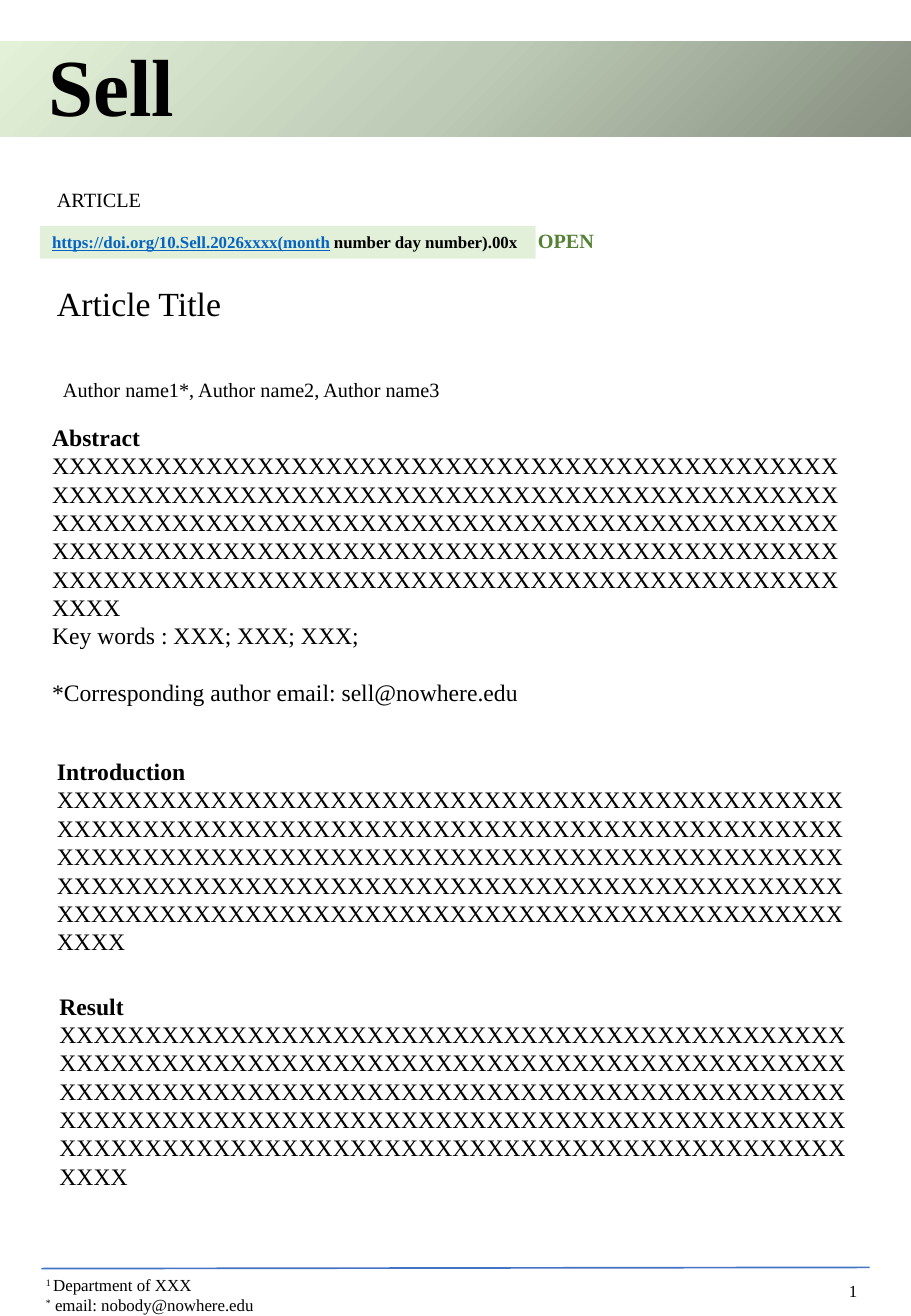
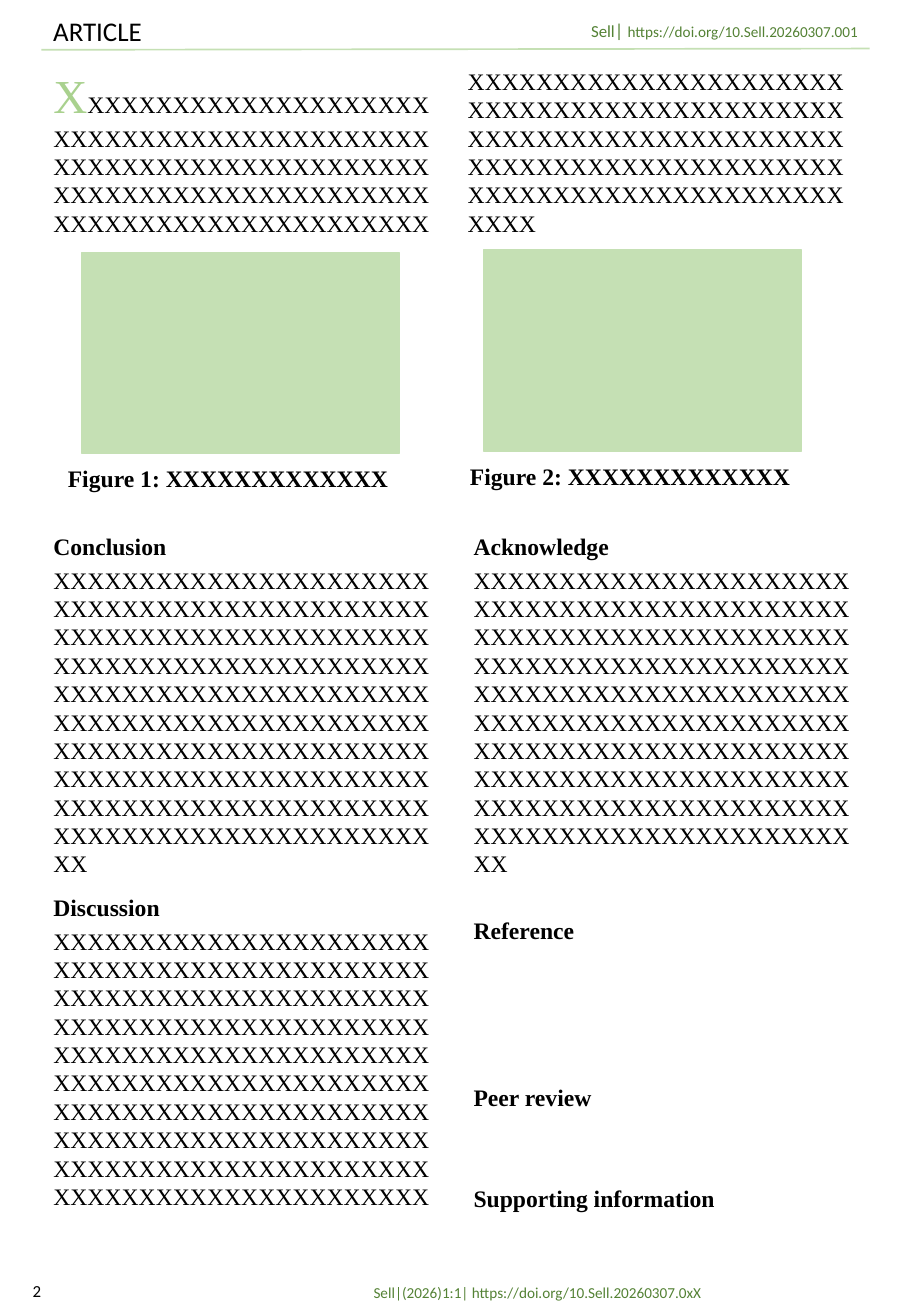
"""Build a two-page journal article template."""
from dataclasses import dataclass

from pptx import Presentation
from pptx.dml.color import RGBColor
from pptx.enum.shapes import MSO_CONNECTOR, MSO_SHAPE
from pptx.enum.text import MSO_AUTO_SIZE, PP_ALIGN
from pptx.oxml import parse_xml
from pptx.oxml.ns import nsdecls, qn
from pptx.util import Inches, Pt

RECT = MSO_SHAPE.RECTANGLE
STRAIGHT = MSO_CONNECTOR.STRAIGHT
FIT = MSO_AUTO_SIZE.SHAPE_TO_FIT_TEXT
LEFT, RIGHT, EVEN = PP_ALIGN.LEFT, PP_ALIGN.RIGHT, PP_ALIGN.JUSTIFY


@dataclass(frozen=True)
class Theme:
    """Colours, fonts and type sizes."""
    serif: str = "Times New Roman"
    sans: str = "Calibri"
    black: str = "000000"
    green: str = "548235"
    leaf: str = "A9D18E"
    pale: str = "C5E0B4"
    mint: str = "E2F0D9"
    link: str = "0563C1"
    blue: str = "4472C4"
    fade: tuple = ((0, "868F80"), (50, "BECBB6"), (100, "E2F1D8"))
    logo: int = 48
    drop: int = 28
    title: int = 20
    head: int = 16
    body: int = 14
    label: int = 12
    bar: int = 11
    small: int = 10
    tiny: int = 9


T = Theme()
WIDE, TALL = 7.5, 10.83
EDGE, END = 0.34, 7.16
ROW, AFTER = 16.8, 3
STEP = ROW + AFTER
BOLD = {"bold": True}
SUP = {"sup": True}

LONG = "X" * 234
MID = "X" * 222
SHORT = "X" * 220

FRONT = [
    ((0.3, 0.24, 1.25, 0.91), ["Sell"], dict(size=T.logo, bold=True, wrap=False)),
    ((0.37, 1.49, 0.91, 0.3), ["ARTICLE"], dict(size=T.label, wrap=False)),
    ((0.33, 1.86, 4.08, 0.27),
     [[("https://doi.org/10.Sell.2026xxxx(month", {"color": T.link, "under": True}),
       (" number day number).00x", {})]],
     dict(size=T.small, bold=True, wrap=False, fill=T.mint)),
    ((4.33, 1.83, 0.68, 0.3), ["OPEN"],
     dict(size=T.label, color=T.green, bold=True, wrap=False)),
    ((0.37, 2.28, 6.99, 0.44), ["Article Title"], dict(size=T.title)),
    ((0.42, 3.06, 6.99, 0.44), ["Author name1*, Author name2, Author name3"],
     dict(size=T.label)),
    ((0.33, 3.43, 6.75, 2.79),
     [[("Abstract", BOLD)], LONG, "Key words : XXX; XXX; XXX;",
      "*Corresponding author email: sell@nowhere.edu"],
     dict(align=EVEN, gaps={3: ROW})),
    ((0.28, 10.44, 6.82, 0.44),
     [[("1 ", SUP), ("Department of XXX", {})],
      [("*", SUP), (" email: nobody@nowhere.edu", {})]], dict(size=T.small)),
    ((6.89, 10.49, 0.27, 0.27), ["1"], dict(size=T.small, wrap=False)),
    ((0.37, 6.18, 6.72, 1.75), [[("Introduction", BOLD)], LONG], {}),
    ((0.39, 8.11, 6.72, 1.75), [[("Result", BOLD)], LONG], {}),
]

PROSE = dict(align=EVEN, after=AFTER)
INNER = [
    ((EDGE, 0.07, 0.96, 0.37), ["ARTICLE"],
     dict(size=T.head, font=T.sans, wrap=False)),
    ((4.75, 0.11, 2.41, 0.29),
     [[("Sell", {"size": T.small}), ("| ", {"size": T.bar}),
       ("https://doi.org/10.Sell.20260307.001", {})]],
     dict(size=T.tiny, font=T.sans, color=T.green, align=RIGHT, wrap=False)),
    ((EDGE, 0.5, 6.82, 1.53),
     [[("X", {"size": T.drop, "color": T.leaf}), (MID, {})]],
     dict(PROSE, cols=2)),
    ((0.17, 10.49, 0.27, 0.27), ["2"],
     dict(size=T.small, font=T.sans, wrap=False)),
    ((2.95, 10.51, 2.92, 0.25),
     ["Sell|(2026)1:1| https://doi.org/10.Sell.20260307.0xX"],
     dict(size=T.tiny, font=T.sans, color=T.green, align=RIGHT, wrap=False)),
    ((EDGE, 4.33, 3.41, 2.97), [[("Conclusion", BOLD)], MID], PROSE),
    ((EDGE, 7.3, 3.41, 2.73), [[("Discussion", BOLD)], SHORT], PROSE),
    ((3.8, 4.33, 3.41, 6.3),
     [[("Acknowledge", BOLD)], MID, [("Reference", BOLD)],
      [("Peer review", BOLD)], [("Supporting information", BOLD)]],
     dict(PROSE, gaps={2: STEP, 3: 4 * STEP, 4: 2 * STEP})),
]

FIGURES = [
    (0.46, 2.08, "Figure 1: XXXXXXXXXXXXX"),
    (3.77, 2.06, "Figure 2: XXXXXXXXXXXXX"),
]


def rgb(code):
    """Turn a hex code into a colour."""
    return RGBColor.from_string(code)


def text(home, box, paras, size=T.body, font=T.serif, color=T.black,
         bold=False, align=LEFT, after=0, wrap=True, cols=1, fill=None,
         gaps=None):
    """Add a text box whose paragraphs are strings or lists of runs."""
    shape = home.add_textbox(*map(Inches, box))
    if fill:
        shape.fill.solid()
        shape.fill.fore_color.rgb = rgb(fill)
    frame = shape.text_frame
    frame.word_wrap = wrap
    frame.auto_size = FIT
    if cols > 1:
        body = frame._txBody.find(qn("a:bodyPr"))
        body.set("numCol", str(cols))
        body.set("spcCol", str(Inches(0.2)))
    for i, runs in enumerate(paras):
        para = frame.paragraphs[0] if i == 0 else frame.add_paragraph()
        para.alignment = align
        para.space_after = Pt(after)
        para.space_before = Pt((gaps or {}).get(i, 0))
        for words, look in [(runs, {})] if isinstance(runs, str) else runs:
            run = para.add_run()
            run.text = words
            face = run.font
            face.name = font
            face.size = Pt(look.get("size", size))
            face.bold = look.get("bold", bold)
            face.underline = look.get("under", False)
            face.color.rgb = rgb(look.get("color", color))
            if look.get("sup"):
                run._r.get_or_add_rPr().set("baseline", "30000")


def rule(home, y, color):
    """Draw a thin rule across the page that rises slightly."""
    line = home.add_connector(
        STRAIGHT, *map(Inches, (EDGE, y, END, y - 0.01)))
    line.line.color.rgb = rgb(color)
    line.line.width = Pt(1)
    line._element.spPr.append(parse_xml(f"<a:effectLst {nsdecls('a')}/>"))


def band(home):
    """Draw the shaded band behind the journal name."""
    shape = home.add_shape(RECT, *map(Inches, (0, 0.34, WIDE, 0.78)))
    shape.shadow.inherit = False
    shape.line.fill.background()
    stops = "".join(
        f'<a:gs pos="{pos * 1000}"><a:srgbClr val="{code}"/></a:gs>'
        for pos, code in T.fade)
    shape._element.spPr.insert(2, parse_xml(
        f'<a:gradFill {nsdecls("a")} rotWithShape="1"><a:gsLst>{stops}</a:gsLst>'
        '<a:path path="circle"><a:fillToRect l="100000" t="100000"/></a:path>'
        '</a:gradFill>'))


def figure(home, left, top, words):
    """Add a grouped figure panel and its caption."""
    group = home.add_group_shape().shapes
    panel = group.add_shape(
        RECT, *map(Inches, (left + 0.21, top, 2.62, 1.65)))
    panel.shadow.inherit = False
    panel.fill.solid()
    panel.fill.fore_color.rgb = rgb(T.pale)
    panel.line.color.rgb = rgb(T.pale)
    panel.line.width = Pt(1)
    text(group, (left, top + 1.69, 2.91, 0.34), [words], bold=True, wrap=False)


def main():
    """Build and save both pages."""
    deck = Presentation()
    deck.slide_width, deck.slide_height = Inches(WIDE), Inches(TALL)
    blank = deck.slide_layouts[6]
    first, second = (deck.slides.add_slide(blank).shapes for _ in range(2))
    band(first)
    rule(first, 10.44, T.blue)
    rule(second, 0.41, T.pale)
    for home, items in ((first, FRONT), (second, INNER)):
        for box, paras, look in items:
            text(home, box, paras, **look)
    for item in FIGURES:
        figure(second, *item)
    deck.save("out.pptx")


if __name__ == "__main__":
    main()
